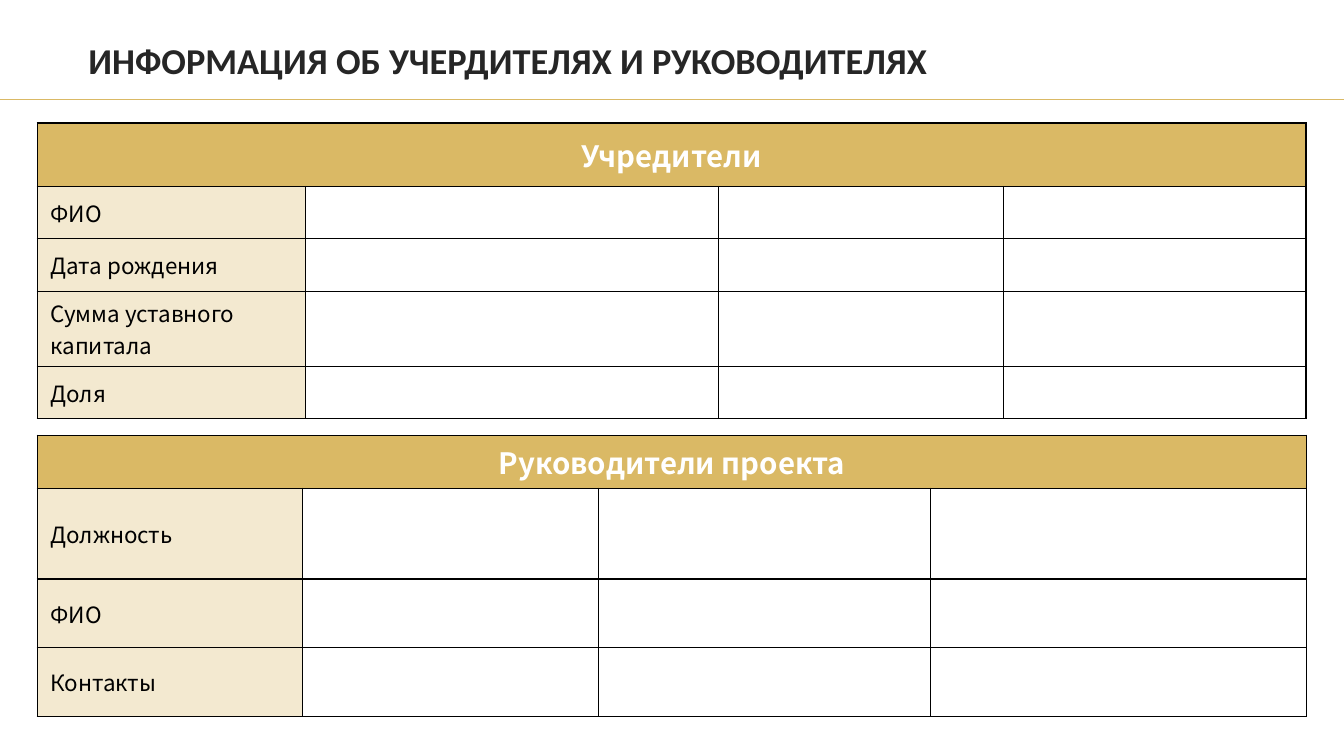
import lxml.etree
import pptx
import pptx.dml.color
import pptx.enum.shapes
import pptx.enum.text
import pptx.oxml.ns
import pptx.util

Cm = pptx.util.Cm
Pt = pptx.util.Pt
qn = pptx.oxml.ns.qn
ALIGN = pptx.enum.text.PP_ALIGN
ANCHOR = pptx.enum.text.MSO_ANCHOR

COLORS = {
    "gold": "DAB965",
    "white": "FFFFFF",
    "black": "000000",
    "title": "262626",
}
TABLE_FONT = "Noto Sans CJK SC"
TABLE_LEFT = 0.94
LABEL_ALPHA = 30


def rgb(name):
    return pptx.dml.color.RGBColor.from_string(COLORS[name])


def write(frame, text, size=16, font=TABLE_FONT, color="black", bold=False,
          align=ALIGN.LEFT, spacing=None):
    para = frame.paragraphs[0]
    para.alignment = align
    para.line_spacing = spacing
    span = para.add_run()
    span.text = text
    span.font.size = Pt(size)
    span.font.name = font
    span.font.bold = bold
    span.font.color.rgb = rgb(color)


class SlideBuilder:
    def __init__(self, deck):
        self.page = deck.slides.add_slide(deck.slide_layouts[6])

    def rule(self, top, width):
        line = self.page.shapes.add_connector(
            pptx.enum.shapes.MSO_CONNECTOR.STRAIGHT, 0, Cm(top), width, Cm(top))
        line.line.color.rgb = rgb("gold")
        line.line.width = Pt(0.5)
        lxml.etree.SubElement(line._element.spPr, qn("a:effectLst"))

    def title(self, text, left, top, width, height):
        box = self.page.shapes.add_textbox(Cm(left), Cm(top), Cm(width), Cm(height))
        frame = box.text_frame
        frame.word_wrap = True
        frame.vertical_anchor = ANCHOR.MIDDLE
        write(frame, text, size=26, font="Calibri", color="title", bold=True, spacing=0.9)

    def style_cell(self, cell, fill, alpha=None):
        """Set margins, black borders and a fill, optionally with opacity in percent."""
        cell.margin_left = cell.margin_right = Cm(0.33)
        cell.margin_top = cell.margin_bottom = Cm(0.13)
        cell.vertical_anchor = ANCHOR.MIDDLE
        properties = cell._tc.get_or_add_tcPr()
        for side in ("L", "R", "T", "B"):
            border = lxml.etree.SubElement(properties, qn(f"a:ln{side}"), w=str(Pt(1)))
            solid = lxml.etree.SubElement(border, qn("a:solidFill"))
            lxml.etree.SubElement(solid, qn("a:srgbClr"), val=COLORS["black"])
        cell.fill.solid()
        cell.fill.fore_color.rgb = rgb(fill)
        if alpha:
            shade = properties.find(qn("a:solidFill")).find(qn("a:srgbClr"))
            lxml.etree.SubElement(shade, qn("a:alpha"), val=str(alpha * 1000))

    def form(self, heading, labels, top, widths, heights):
        """Add a table with a merged heading, a label column and empty fields."""
        table = self.page.shapes.add_table(
            len(heights), len(widths), Cm(TABLE_LEFT), Cm(top),
            Cm(sum(widths)), Cm(sum(heights))).table
        table.horz_banding = False
        for column, width in zip(table.columns, widths):
            column.width = Cm(width)
        for row, height in zip(table.rows, heights):
            row.height = Cm(height)

        for cell in table.rows[0].cells:
            self.style_cell(cell, "gold")
        table.cell(0, 0).merge(table.cell(0, len(widths) - 1))
        write(table.cell(0, 0).text_frame, heading, size=21, color="white",
              bold=True, align=ALIGN.CENTER)

        for index, label in enumerate(labels, start=1):
            name, *fields = table.rows[index].cells
            self.style_cell(name, "gold", LABEL_ALPHA)
            write(name.text_frame, label)
            for field in fields:
                self.style_cell(field, "white")


def main():
    deck = pptx.Presentation()
    deck.slide_width = Cm(33.87)
    deck.slide_height = Cm(19.05)
    slide = SlideBuilder(deck)
    slide.rule(2.51, deck.slide_width)
    slide.form("Учредители",
               ["ФИО", "Дата рождения", "Сумма уставного капитала", "Доля"],
               top=3.1, widths=[6.76, 10.41, 7.18, 7.62],
               heights=[1.6] + [1.32] * 4)
    slide.form("Руководители проекта", ["Должность", "ФИО", "Контакты"],
               top=10.97, widths=[6.68, 7.47, 8.36, 9.47],
               heights=[1.17, 2.29, 1.73, 1.73])
    slide.title("ИНФОРМАЦИЯ ОБ УЧЕРДИТЕЛЯХ И РУКОВОДИТЕЛЯХ", 1.98, 0.79, 23.24, 1.6)
    deck.save("out.pptx")


if __name__ == "__main__":
    main()
